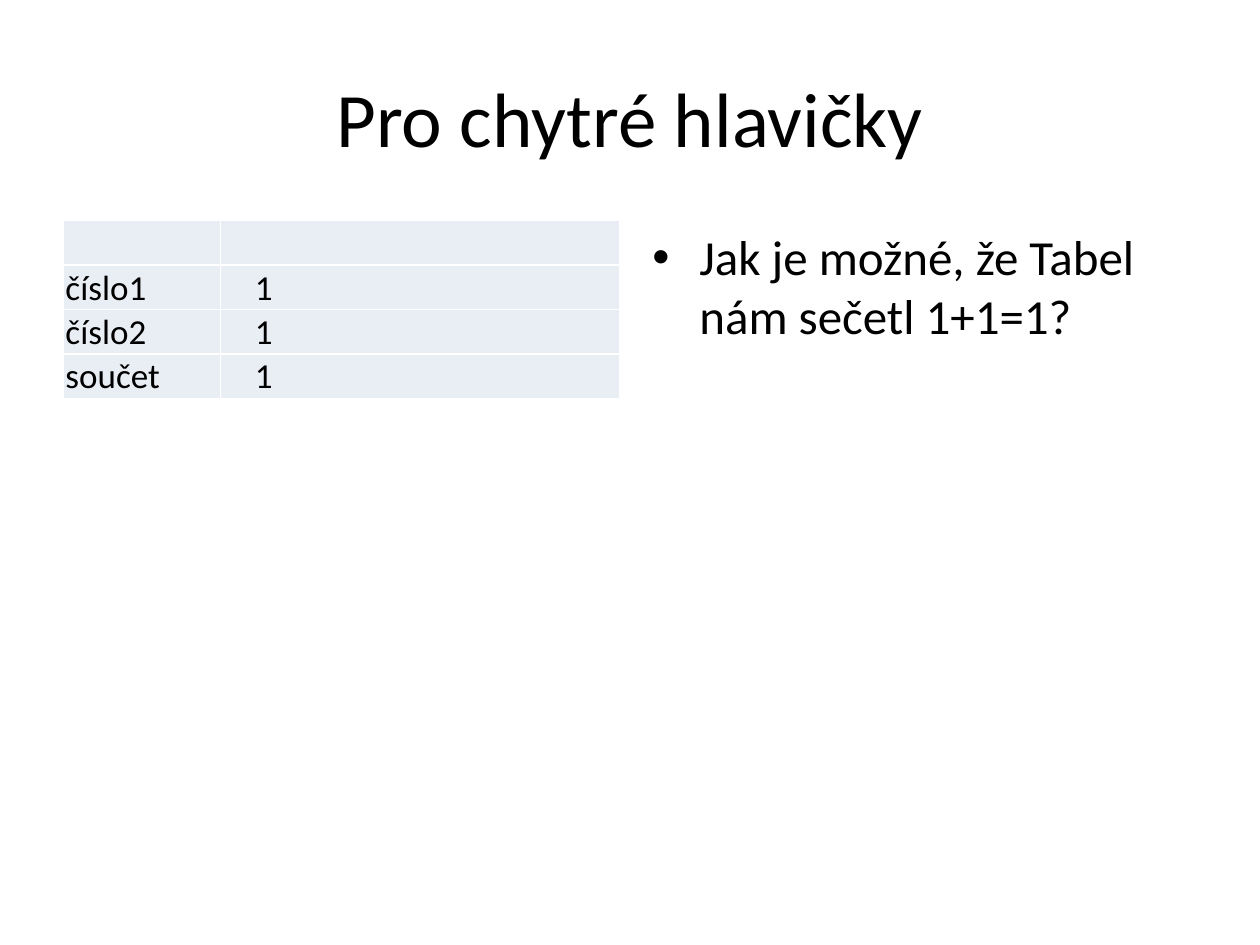
import pptx
import pptx.dml.color
import pptx.enum.text
import pptx.util
from lxml import etree
from pptx.oxml.ns import qn

Cm, Pt = pptx.util.Cm, pptx.util.Pt
RGB = pptx.dml.color.RGBColor.from_string
ANCHOR, ALIGN = pptx.enum.text.MSO_ANCHOR, pptx.enum.text.PP_ALIGN

TITLE = "Pro chytré hlavičky"
ROWS = [("", ""), ("číslo1", "1"), ("číslo2", "1"), ("součet", "1")]
QUESTION = "Jak je možné, že Tabel nám sečetl 1+1=1?"

THEME = {
    "font": "Calibri", "text": "000000", "cell": "E9EDF4", "border": "FFFFFF",
    "title": 44, "body": 28, "table": 20,
}

SLIDE_W, SLIDE_H = 25.4, 19.05
MARGIN, TOP = 1.27, 4.45
PANEL_W, PANEL_H = 11.23, 12.57
COL_W = (3.18, PANEL_W - 3.18)
COL_INSET = (0.05, 0.69)
ROW_H = 0.89
BULLET_INDENT = 0.95


def style(p, size):
    p.font.name = THEME["font"]
    p.font.size = Pt(THEME[size])
    p.font.color.rgb = RGB(THEME["text"])


def add_borders(cell):
    tc_pr = cell._tc.get_or_add_tcPr()
    for i, side in enumerate(("lnL", "lnR", "lnT", "lnB")):
        ln = etree.Element(qn("a:" + side), w=str(Pt(1)))
        fill = etree.SubElement(ln, qn("a:solidFill"))
        etree.SubElement(fill, qn("a:srgbClr"), val=THEME["border"])
        tc_pr.insert(i, ln)  # borders come before the fill


def add_title(s):
    title = s.shapes.title
    title.left, title.top = Cm(MARGIN), Cm(0.76)
    title.width, title.height = Cm(SLIDE_W - 2 * MARGIN), Cm(3.18)
    tf = title.text_frame
    tf.text = TITLE
    tf.vertical_anchor = ANCHOR.MIDDLE
    p = tf.paragraphs[0]
    p.alignment = ALIGN.CENTER
    style(p, "title")


def add_sum_table(s):
    table = s.shapes.add_table(
        len(ROWS), len(COL_W), Cm(MARGIN), Cm(TOP),
        Cm(PANEL_W), Cm(ROW_H * len(ROWS))).table
    table.first_row = table.horz_banding = False
    for col, width in zip(table.columns, COL_W):
        col.width = Cm(width)
    for row, texts in zip(table.rows, ROWS):
        row.height = Cm(ROW_H)
        for cell, text, inset in zip(row.cells, texts, COL_INSET):
            cell.text = text
            cell.vertical_anchor = ANCHOR.BOTTOM
            cell.margin_left, cell.margin_right = Cm(inset), Cm(0.05)
            cell.margin_top, cell.margin_bottom = Cm(0.03), Cm(0)
            cell.fill.solid()
            cell.fill.fore_color.rgb = RGB(THEME["cell"])
            add_borders(cell)
            style(cell.text_frame.paragraphs[0], "table")


def add_question(s):
    box = s.shapes.add_textbox(Cm(SLIDE_W - MARGIN - PANEL_W), Cm(TOP),
                               Cm(PANEL_W), Cm(PANEL_H))
    tf = box.text_frame
    tf.word_wrap = True
    p = tf.paragraphs[0]
    p.text = QUESTION
    p.space_before = Pt(0.2 * THEME["body"])
    style(p, "body")
    p_pr = p._p.get_or_add_pPr()
    p_pr.set("marL", str(Cm(BULLET_INDENT)))
    p_pr.set("indent", str(-Cm(BULLET_INDENT)))
    def_rpr = p_pr.find(qn("a:defRPr"))
    def_rpr.addprevious(etree.Element(qn("a:buFont"), typeface="Arial"))
    def_rpr.addprevious(etree.Element(qn("a:buChar"), char="•"))


def main():
    prs = pptx.Presentation()
    prs.slide_width, prs.slide_height = Cm(SLIDE_W), Cm(SLIDE_H)
    s = prs.slides.add_slide(prs.slide_layouts[5])
    add_title(s)
    add_sum_table(s)
    add_question(s)
    prs.save("out.pptx")


if __name__ == "__main__":
    main()
